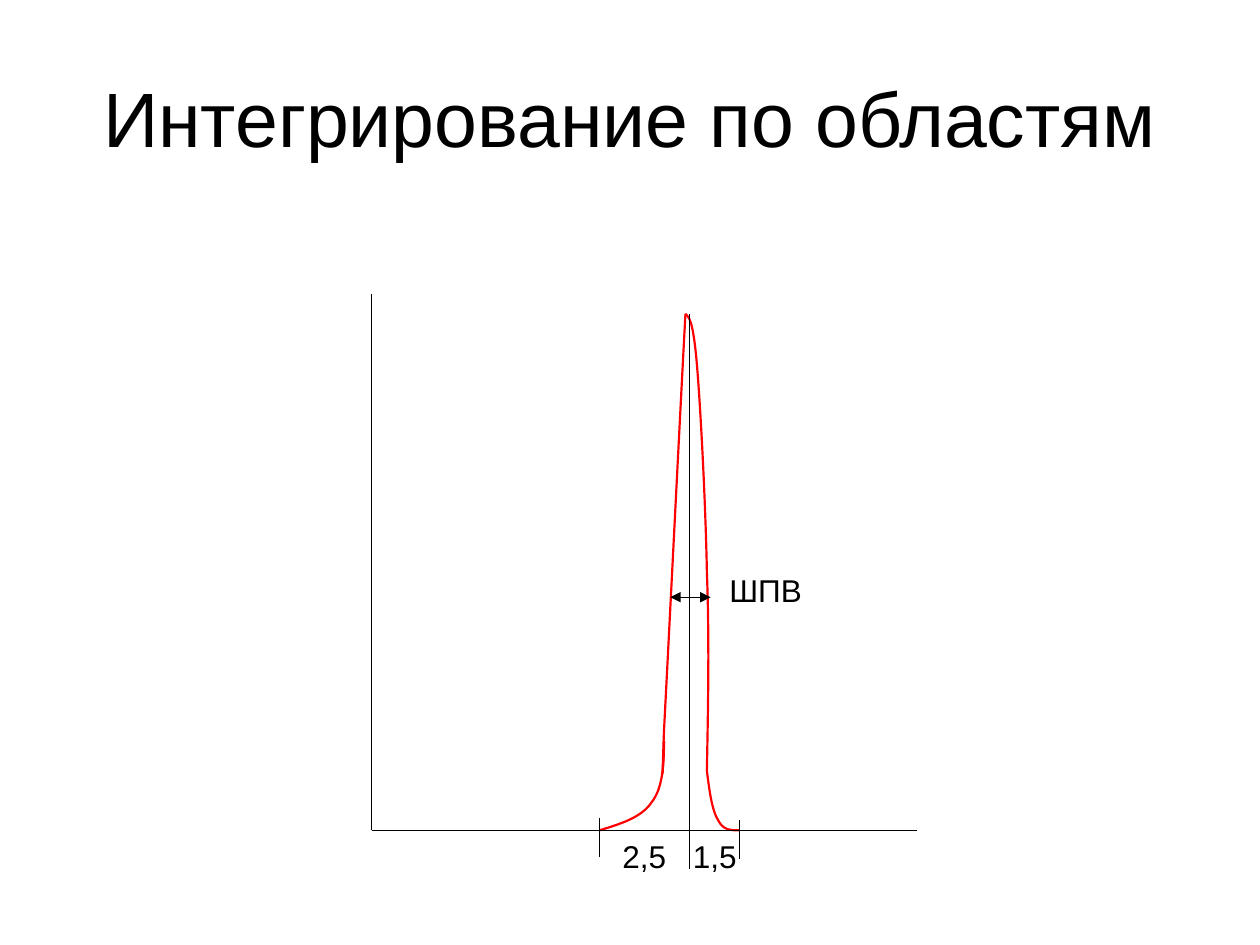
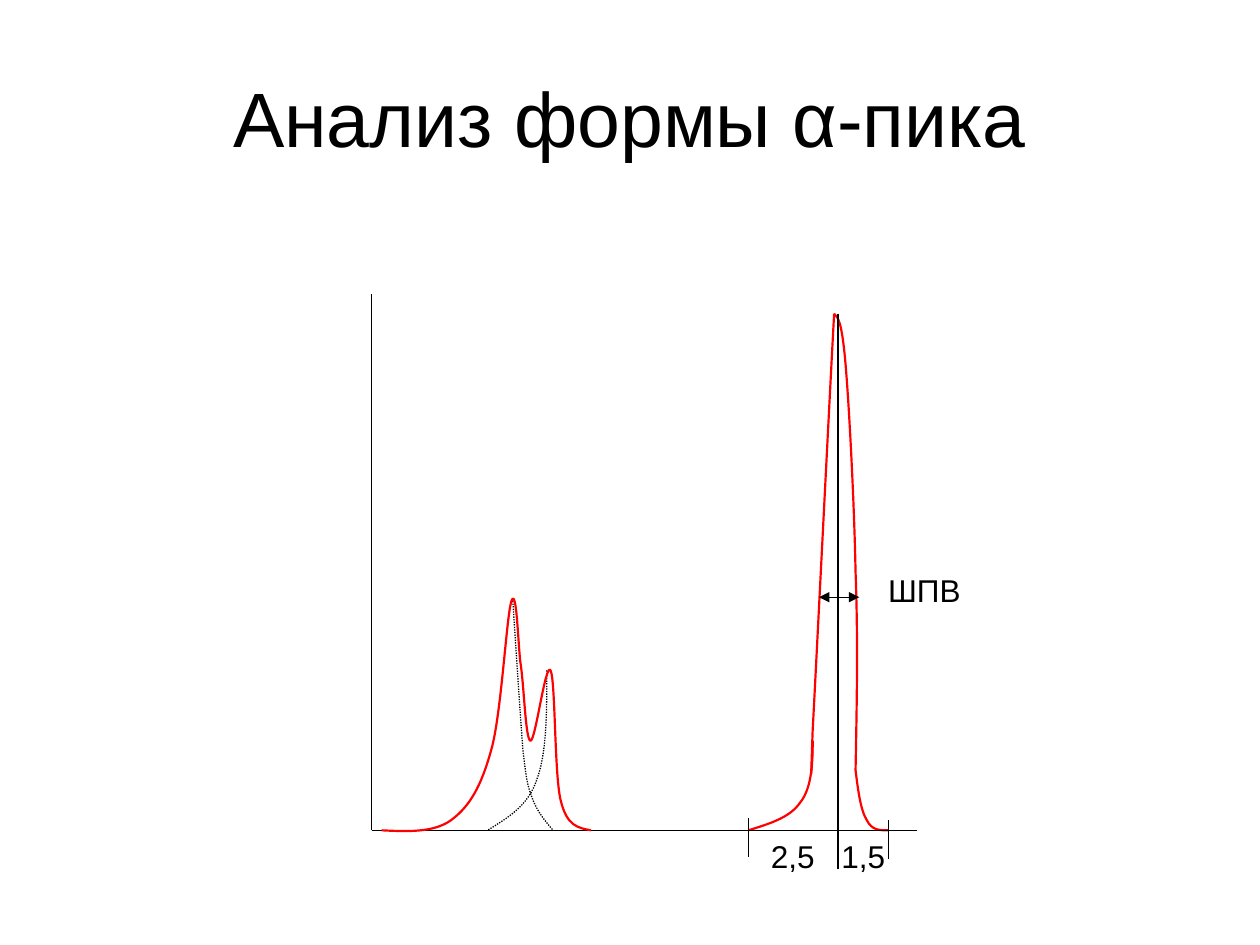
from pptx import Presentation
from pptx.dml.color import RGBColor
from pptx.enum.dml import MSO_LINE
from pptx.enum.shapes import MSO_CONNECTOR
from pptx.enum.text import MSO_ANCHOR, MSO_AUTO_SIZE, PP_ALIGN
from pptx.oxml.ns import qn
from pptx.oxml.xmlchemy import OxmlElement
from pptx.util import Inches, Pt

BLACK = RGBColor(0x00, 0x00, 0x00)
RED = RGBColor(0xFF, 0x00, 0x00)
FONT = "Arial"
STRAIGHT = MSO_CONNECTOR.STRAIGHT
DOTTED = MSO_LINE.ROUND_DOT
TITLE_ONLY = 5
THIN, THICK = 0.75, 1.25

# Axes of the spectrum
AXIS_LEFT, AXIS_RIGHT = 2.95, 7.28
AXIS_TOP, BASE = 2.33, 6.59
PEAK_TOP, HALF_HEIGHT = 2.49, 4.74

# Bezier curves: a start point, then three points per segment.
# The x values of the main peak are measured from its centre line.
MAIN_PEAK = [
    # left foot
    [(-0.71, BASE), (-0.55, 6.54), (-0.38, 6.49), (-0.30, 6.37),
     (-0.21, 6.26), (-0.20, 6.07), (-0.20, 5.88)],
    # right slope
    [(-0.03, PEAK_TOP), (0, 2.52), (0.03, 2.54), (0.06, 2.88),
     (0.09, 3.23), (0.13, 4.00), (0.14, 4.54),
     (0.16, 5.08), (0.15, 5.59), (0.14, 6.11)],
    # right foot
    [(0.14, 6.11), (0.16, 6.27), (0.18, 6.43), (0.23, 6.51),
     (0.27, BASE), (0.33, BASE), (0.40, BASE)],
    # left slope
    [(-0.20, 5.88), (-0.21, 6.12), (-0.22, 6.36), (-0.20, 5.80),
     (-0.17, 5.23), (-0.06, 3.04), (-0.03, PEAK_TOP)],
]
HIDDEN_SLOPES = [
    [(4.07, 4.77), (4.10, 5.23), (4.13, 5.69), (4.15, 5.95),
     (4.18, 6.22), (4.19, 6.24), (4.23, 6.35),
     (4.27, 6.45), (4.33, 6.52), (4.39, BASE)],
    [(4.34, 5.32), (4.34, 5.65), (4.34, 5.98), (4.26, 6.19),
     (4.19, 6.40), (4.03, 6.49), (3.87, BASE)],
]
DOUBLE_PEAK = [
    (3.03, BASE), (3.23, 6.60), (3.44, 6.61), (3.58, 6.51),
    (3.73, 6.40), (3.82, 6.24), (3.90, 5.95),
    (3.98, 5.67), (4.02, 4.89), (4.06, 4.77),
    (4.10, 4.66), (4.11, 5.06), (4.13, 5.25),
    (4.16, 5.43), (4.17, 5.86), (4.21, 5.88),
    (4.25, 5.89), (4.33, 5.25), (4.37, 5.32),
    (4.41, 5.40), (4.40, 6.14), (4.45, 6.35),
    (4.50, 6.56), (4.59, 6.57), (4.69, BASE),
]


def format_text(tf, size):
    for p in tf.paragraphs:
        for r in p.runs:
            r.font.name = FONT
            r.font.size = Pt(size)
            r.font.color.rgb = BLACK


def add_titled_slide(prs, title):
    s = prs.slides.add_slide(prs.slide_layouts[TITLE_ONLY])
    sp = s.shapes.title
    sp.left, sp.top = Inches(0.5), Inches(0.3)
    sp.width, sp.height = Inches(9), Inches(1.25)
    tf = sp.text_frame
    tf.text = title
    tf.vertical_anchor = MSO_ANCHOR.MIDDLE
    tf.paragraphs[0].alignment = PP_ALIGN.CENTER
    format_text(tf, 44)
    return s


def add_label(s, x, y, w, text):
    sp = s.shapes.add_textbox(Inches(x), Inches(y), Inches(w), Inches(0.4))
    tf = sp.text_frame
    tf.text = text
    tf.word_wrap = False
    tf.auto_size = MSO_AUTO_SIZE.SHAPE_TO_FIT_TEXT
    format_text(tf, 18)


def add_line(s, x1, y1, x2, y2, arrows=False):
    c = s.shapes.add_connector(STRAIGHT, Inches(x1), Inches(y1),
                               Inches(x2), Inches(y2))
    c.line.color.rgb = BLACK
    c.line.width = Pt(THIN)
    spPr = c._element.spPr
    spPr.append(OxmlElement("a:effectLst"))
    if arrows:
        for tag in ("a:headEnd", "a:tailEnd"):
            end = OxmlElement(tag)
            end.set("type", "triangle")
            spPr.find(qn("a:ln")).append(end)


def add_curve(shapes, points, color, width, dash=None, dx=0):
    pts = [(Inches(x + dx), Inches(y)) for x, y in points]
    builder = shapes.build_freeform(*pts[0])
    builder.add_line_segments(pts[1:], close=False)
    sp = builder.convert_to_shape()
    # Turn every three straight segments into one Bezier segment
    segments = list(sp._element.iter(qn("a:lnTo")))
    for i in range(0, len(segments), 3):
        bezier = OxmlElement("a:cubicBezTo")
        segments[i].addprevious(bezier)
        for segment in segments[i:i + 3]:
            bezier.append(segment[0])
            segment.getparent().remove(segment)
    sp.shadow.inherit = False
    sp.fill.background()
    sp.line.color.rgb = color
    sp.line.width = Pt(width)
    if dash:
        sp.line.dash_style = dash


def add_spectrum(s, center, width_label_x):
    # Main peak
    peak = s.shapes.add_group_shape()
    for points in MAIN_PEAK:
        add_curve(peak.shapes, points, RED, THICK, dx=center)
    # Centre line and axes
    add_line(s, center, PEAK_TOP, center, 6.9)
    add_line(s, AXIS_RIGHT, BASE, AXIS_LEFT, BASE)
    add_line(s, AXIS_LEFT, BASE, AXIS_LEFT, AXIS_TOP)
    # Width at half height and bounds of the region
    add_line(s, center - 0.15, HALF_HEIGHT, center + 0.17, HALF_HEIGHT,
             arrows=True)
    for dx, top in ((-0.71, 6.49), (0.40, 6.51)):
        add_line(s, center + dx, top, center + dx, top + 0.31)
    # Labels
    add_label(s, width_label_x, 4.48, 0.78, "ШПВ")
    add_label(s, center - 0.63, BASE, 0.55, "2,5")
    add_label(s, center - 0.07, BASE, 0.55, "1,5")


def add_double_peak(s):
    for points in HIDDEN_SLOPES:
        add_curve(s.shapes, points, BLACK, THIN, DOTTED)
    add_curve(s.shapes, DOUBLE_PEAK, RED, THICK)


def main():
    prs = Presentation()
    prs.slide_width, prs.slide_height = Inches(10), Inches(7.5)

    s = add_titled_slide(prs, "Интегрирование по областям")
    add_spectrum(s, center=5.47, width_label_x=5.69)

    s = add_titled_slide(prs, "Анализ формы α-пика")
    add_spectrum(s, center=6.65, width_label_x=6.95)
    add_double_peak(s)

    prs.save("out.pptx")


if __name__ == "__main__":
    main()
